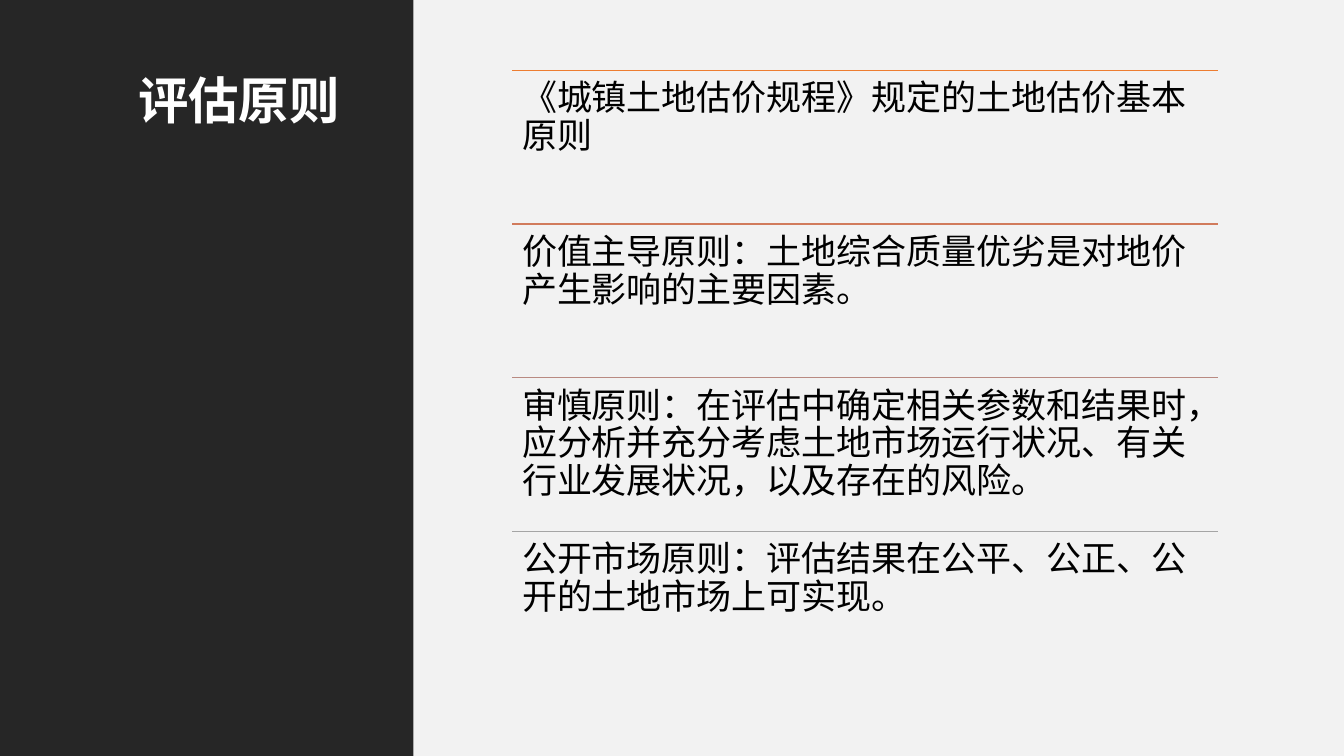
from dataclasses import dataclass

from lxml import etree
from pptx import Presentation
from pptx.dml.color import RGBColor
from pptx.enum.shapes import MSO_CONNECTOR, MSO_SHAPE
from pptx.enum.text import MSO_ANCHOR, MSO_AUTO_SIZE, PP_ALIGN
from pptx.oxml.ns import qn
from pptx.util import Inches, Pt

RECTANGLE = MSO_SHAPE.RECTANGLE
STRAIGHT = MSO_CONNECTOR.STRAIGHT
TOP = MSO_ANCHOR.TOP
LEFT = PP_ALIGN.LEFT
NO_FIT = MSO_AUTO_SIZE.NONE


@dataclass(frozen=True)
class Theme:
    font: str = "Noto Sans CJK SC"
    title_size: int = 36
    body_size: int = 25
    sidebar: str = "262626"
    canvas: str = "F2F2F2"
    title: str = "FFFFFF"
    body: str = "000000"
    rules: tuple = ("ED7D31", "D17B5C", "B98A82", "A5A5A5")


# Page and list grid, in inches
WIDTH, HEIGHT = 13.33, 7.5
SIDEBAR_WIDTH = 4.1
TOP_MARGIN = 0.7
LIST_LEFT, LIST_WIDTH = 5.08, 7
ROW_HEIGHT = 1.524

PRINCIPLES = (
    "《城镇土地估价规程》规定的土地估价基本原则",
    "价值主导原则：土地综合质量优劣是对地价产生影响的主要因素。",
    "审慎原则：在评估中确定相关参数和结果时，应分析并充分考虑土地市场运行状况、有关行业发展状况，以及存在的风险。",
    "公开市场原则：评估结果在公平、公正、公开的土地市场上可实现。",
)


def write(frame, text, *, font, size, color, bold=False, space_after=0):
    frame.word_wrap = True
    frame.auto_size = NO_FIT
    frame.vertical_anchor = TOP
    paragraph = frame.paragraphs[0]
    paragraph.alignment = LEFT
    paragraph.line_spacing = 0.9
    paragraph.space_after = Pt(space_after)
    run = paragraph.add_run()
    run.text = text
    run.font.size = Pt(size)
    run.font.bold = bold
    run.font.color.rgb = RGBColor.from_string(color)
    run.font.name = font
    # East Asian characters need their own typeface entry
    east_asian = etree.SubElement(run.font._element, qn("a:ea"))
    east_asian.set("typeface", font)


class Board:
    def __init__(self, slide, theme):
        self.slide = slide
        self.theme = theme

    def panel(self, left, width, color):
        panel = self.slide.shapes.add_shape(
            RECTANGLE, Inches(left), 0, Inches(width), Inches(HEIGHT))
        panel.shadow.inherit = False
        panel.fill.solid()
        panel.fill.fore_color.rgb = RGBColor.from_string(color)
        panel.line.fill.background()

    def title(self, text, left, top, width, height):
        heading = self.slide.shapes.title
        heading.left, heading.top = Inches(left), Inches(top)
        heading.width, heading.height = Inches(width), Inches(height)
        # Bring the heading in front of the panels
        self.slide.shapes._spTree.append(heading._element)
        write(heading.text_frame, text, font=self.theme.font,
              size=self.theme.title_size, color=self.theme.title, bold=True)

    def rule(self, top, color):
        rule = self.slide.shapes.add_connector(
            STRAIGHT, Inches(LIST_LEFT), Inches(top),
            Inches(LIST_LEFT + LIST_WIDTH), Inches(top))
        rule.line.color.rgb = RGBColor.from_string(color)
        rule.line.width = Pt(1)
        etree.SubElement(rule._element.spPr, qn("a:effectLst"))

    def principle(self, text, row):
        top = TOP_MARGIN + row * ROW_HEIGHT
        self.rule(top, self.theme.rules[row])
        box = self.slide.shapes.add_textbox(
            Inches(LIST_LEFT), Inches(top), Inches(LIST_WIDTH), Inches(ROW_HEIGHT))
        frame = box.text_frame
        frame.margin_left = frame.margin_right = Inches(0.1)
        frame.margin_top = frame.margin_bottom = Inches(0.1)
        write(frame, text, font=self.theme.font, size=self.theme.body_size,
              color=self.theme.body, space_after=9)


def main():
    deck = Presentation()
    deck.slide_width, deck.slide_height = Inches(WIDTH), Inches(HEIGHT)
    title_only = deck.slide_layouts[5]
    theme = Theme()
    board = Board(deck.slides.add_slide(title_only), theme)

    # Background panels
    board.panel(SIDEBAR_WIDTH, WIDTH - SIDEBAR_WIDTH, theme.canvas)
    board.panel(0, SIDEBAR_WIDTH, theme.sidebar)

    # Sidebar heading
    board.title("评估原则", 1.27, TOP_MARGIN, 2.4, HEIGHT - 2 * TOP_MARGIN)

    # Ruled list of principles
    for row, text in enumerate(PRINCIPLES):
        board.principle(text, row)

    deck.save("out.pptx")


if __name__ == "__main__":
    main()
